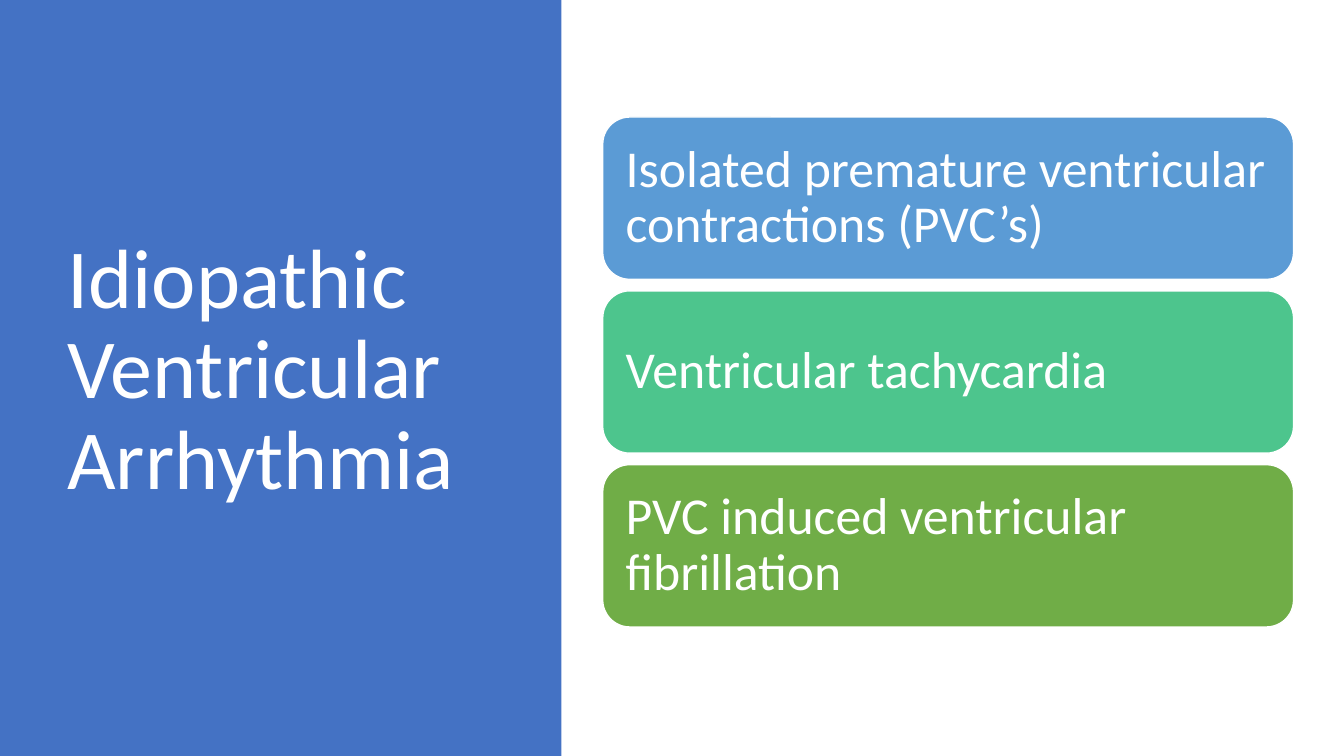
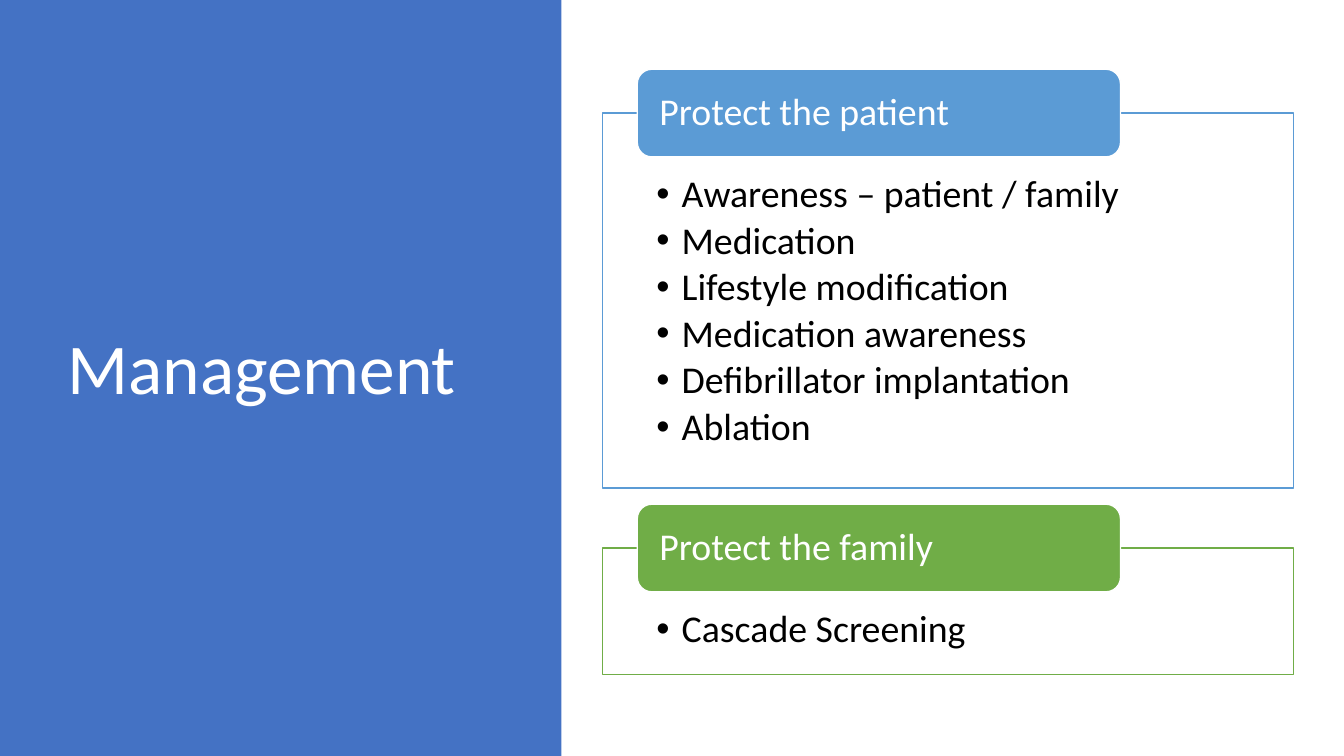
from lxml.etree import SubElement as Sub
from pptx import Presentation as Pres
from pptx.dml.color import RGBColor as RGB
from pptx.enum.shapes import MSO_SHAPE as Kind
from pptx.enum.text import MSO_ANCHOR as Anchor, PP_ALIGN as Align
from pptx.oxml.ns import qn
from pptx.util import Cm, Pt

NAVY = RGB(0x44, 0x72, 0xC4)
BLUE = RGB(0x5B, 0x9B, 0xD5)
MINT = RGB(0x4D, 0xC5, 0x8D)
GREEN = RGB(0x70, 0xAD, 0x47)
WHITE = RGB(0xFF, 0xFF, 0xFF)
BLACK = RGB(0, 0, 0)

WIDE, HIGH = 33.87, 19.05
LEFT, SPAN = 15.19, 17.41


def put(shape, *lines, size, color=WHITE, anchor=Anchor.MIDDLE,
        pads=(0.25, 0.13, 0.25, 0.13), after=0, dots=False):
    frame = shape.text_frame
    frame.word_wrap = True
    frame.vertical_anchor = anchor
    (frame.margin_left, frame.margin_top,
     frame.margin_right, frame.margin_bottom) = map(Cm, pads)
    for i, line in enumerate(lines):
        para = frame.add_paragraph() if i else frame.paragraphs[0]
        para.alignment = Align.LEFT
        para.line_spacing = 0.9
        para.space_after = Pt(after)
        run = para.add_run()
        run.text = line
        run.font.name = "Calibri"
        run.font.size = Pt(size)
        run.font.color.rgb = color
        if dots:
            props = para._p.get_or_add_pPr()
            props.set("marL", str(Cm(0.64)))
            props.set("indent", str(-Cm(0.64)))
            Sub(props, qn("a:buFont"), typeface="Arial")
            Sub(props, qn("a:buChar"), char="•")


class Deck:
    def __init__(self):
        self.pres = Pres()
        self.pres.slide_width = Cm(WIDE)
        self.pres.slide_height = Cm(HIGH)
        self.slide = None

    def page(self, title, size):
        self.slide = self.pres.slides.add_slide(self.pres.slide_layouts[6])
        self.box(Kind.RECTANGLE, 0, 0, 14.15, HIGH, NAVY)
        head = self.slide.shapes.add_textbox(
            Cm(1.45), Cm(1.72), Cm(10.57), Cm(15.29))
        put(head, title, size=size)

    def box(self, kind, x, y, w, h, fill, line=None):
        shape = self.slide.shapes.add_shape(kind, Cm(x), Cm(y), Cm(w), Cm(h))
        shape.shadow.inherit = False
        shape.fill.solid()
        shape.fill.fore_color.rgb = fill
        if line is None:
            shape.line.fill.background()
        else:
            shape.line.color.rgb = line
            shape.line.width = Pt(1)
        return shape

    def card(self, text, x, y, w, h, fill, size, pad):
        shape = self.box(Kind.ROUNDED_RECTANGLE, x, y, w, h, fill, WHITE)
        put(shape, text, size=size, pads=(pad, 0, pad, 0))

    def panel(self, name, items, y, h, color):
        frame = self.box(Kind.RECTANGLE, LEFT, y, SPAN, h, WHITE, color)
        put(frame, *items, size=27, color=BLACK, anchor=Anchor.TOP,
            pads=(1.35, 1.56, 1.35, 0.53), after=4.05, dots=True)
        tab = 2.21
        self.card(name, LEFT + 0.87, y - tab / 2, 12.18, tab, color, 27, 0.45)

    def stack(self, cards, top, tall, gap):
        for i, (text, fill) in enumerate(cards):
            y = top + i * (tall + gap)
            self.card(text, LEFT, y, SPAN, tall, fill, 37, 0.38)


def main():
    deck = Deck()

    deck.page("Idiopathic Ventricular Arrhythmia", 60)
    deck.stack([
        ("Isolated premature ventricular contractions (PVC’s)", BLUE),
        ("Ventricular tachycardia", MINT),
        ("PVC induced ventricular fibrillation", GREEN),
    ], top=2.95, tall=4.09, gap=0.29)

    deck.page("Management", 51)
    deck.panel("Protect the patient", [
        "Awareness – patient / family",
        "Medication",
        "Lifestyle modification",
        "Medication awareness",
        "Defibrillator implantation",
        "Ablation",
    ], 2.85, 9.45, BLUE)
    deck.panel("Protect the family", ["Cascade Screening"], 13.81, 3.19, GREEN)

    deck.pres.save("out.pptx")


if __name__ == "__main__":
    main()
